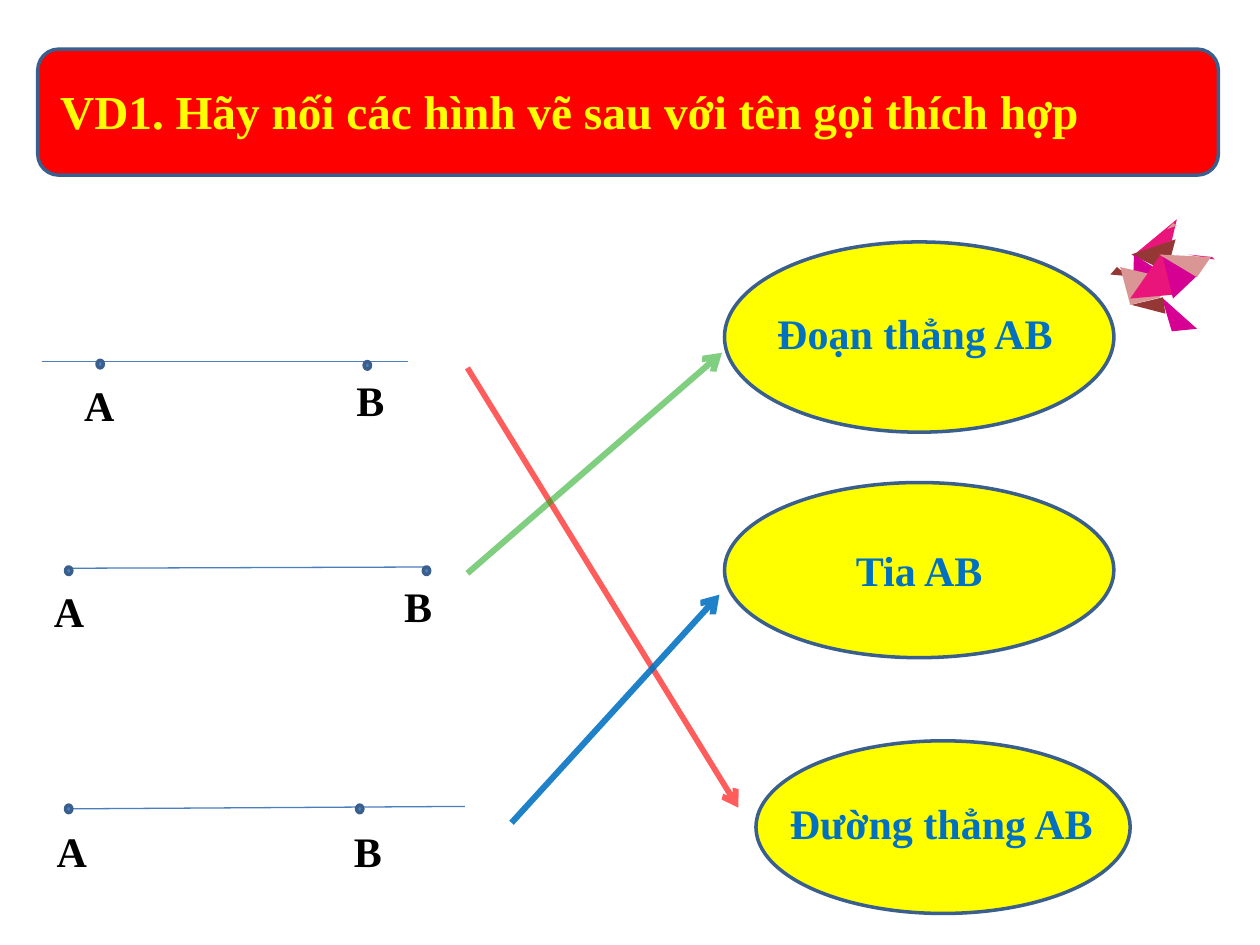
from dataclasses import dataclass
from typing import Optional

from lxml.etree import SubElement
from pptx import Presentation
from pptx.dml.color import RGBColor
from pptx.enum.shapes import MSO_CONNECTOR, MSO_SHAPE
from pptx.enum.text import MSO_ANCHOR, MSO_AUTO_SIZE, PP_ALIGN
from pptx.oxml.ns import qn
from pptx.util import Inches, Length, Pt

# The slide is a grid of 100 columns by 75 rows
COLUMNS, ROWS = 100, 75
CELL = Inches(0.1)
FONT = "Times New Roman"
OUTLINE, POINT_FILL, FIGURE_LINE = "3A5F8C", "4F81BD", "4B7EBC"
RED, YELLOW, BLUE, BLACK = "FF0000", "FFFF00", "0070C0", "000000"
PINK, ROSE, BROWN, MAGENTA = "EA157A", "D99694", "953735", "D60093"

Position = tuple[float, float]
Box = tuple[float, float, float, float]


@dataclass
class Figure:
    line: tuple[Position, Position]
    points: tuple[Position, Position]
    labels: tuple[Box, Box]


@dataclass
class Name:
    text: str
    oval: Box
    label: Optional[Box] = None


@dataclass
class Arrow:
    start: Position
    end: Position
    color: str
    width: float
    opacity: int


@dataclass
class Facet:
    color: str
    corners: list[Position]


FIGURES = [
    Figure(((3.3, 28.7), (32.4, 28.7)), ((7.7, 28.6), (28.9, 28.7)),
           ((5.7, 29.6, 4.5, 5), (27.3, 29.2, 4.3, 5))),
    Figure(((5.4, 45.1), (33.8, 45)), ((5.2, 45), (33.6, 45)),
           ((3.3, 46, 4.5, 5), (31.1, 45.6, 3.9, 5))),
    Figure(((5.2, 64.2), (36.9, 64)), ((5.2, 63.9), (28.3, 63.9)),
           ((3.5, 65, 4.5, 5), (27.1, 65, 4.3, 5))),
]
NAMES = [
    Name("Đoạn thẳng AB", (57.5, 19.2, 30.9, 15.1), (60.7, 23.9, 25.6, 6.1)),
    Name("Tia AB", (57.5, 38.3, 30.9, 13.9)),
    Name("Đường thẳng AB", (60, 58.8, 29.7, 13.7), (61.7, 62.8, 26.3, 5)),
]
ARROWS = [
    Arrow((37.1, 29.2), (58.6, 64.1), RED, 3.25, 63),
    Arrow((37.1, 45.5), (57.3, 28), "18A81B", 3.5, 55),
    Arrow((40.6, 65.3), (57.1, 47.2), BLUE, 3.5, 88),
]
BIRD_BACK = [
    Facet(PINK, [(94.3, 20.2), (96.2, 20.4), (96.4, 20.6)]),
    Facet(PINK, [(89.9, 20.3), (93.4, 17.4), (93, 19.1)]),
    Facet(ROSE, [(92.6, 18.2), (93.1, 17.7), (93.4, 17.9)]),
    Facet(BROWN, [(89.8, 20.2), (93.3, 19), (92.6, 21.6)]),
    Facet(MAGENTA, [(89.9, 23.1), (90, 20.2), (92, 21.5)]),
]
BEAK: Box = (88.4, 21.3, 0.8, 1.1)
BIRD_FRONT = [
    Facet(MAGENTA, [(93, 26.3), (92.2, 23.6), (95, 26.1)]),
    Facet(ROSE, [(88.9, 21.2), (91.9, 21.9), (92.1, 23.6), (89.7, 24.2)]),
    Facet(BROWN, [(92.3, 23.6), (92.5, 24.9), (89.8, 24.2)]),
    Facet(PINK, [(89.7, 23.7), (92.2, 20.1), (93.1, 23.4)]),
    Facet(MAGENTA, [(95, 21.9), (93.1, 23.7), (92.3, 20.4)]),
    Facet(ROSE, [(96.1, 20.4), (95, 22), (92, 20.2)]),
]


def cells(*values: float) -> list[Length]:
    return [Length(round(value * CELL)) for value in values]


def color_of(hex_text: str) -> RGBColor:
    return RGBColor.from_string(hex_text)


def paint(shape, fill: str, outline: Optional[str] = None) -> None:
    shape.shadow.inherit = False
    shape.fill.solid()
    shape.fill.fore_color.rgb = color_of(fill)
    if outline:
        shape.line.color.rgb = color_of(outline)
        shape.line.width = Pt(2)
    else:
        shape.line.fill.background()


def add_preset(slide, preset, box: Box, fill: str, outline: Optional[str] = None):
    shape = slide.shapes.add_shape(preset, *cells(*box))
    paint(shape, fill, outline)
    return shape


def write(paragraph, text: str, size: float, color: str) -> None:
    run = paragraph.add_run()
    run.text = text
    run.font.name = FONT
    run.font.size = Pt(size)
    run.font.bold = True
    run.font.color.rgb = color_of(color)


def add_label(slide, text: str, box: Box, size: float, color: str) -> None:
    frame = slide.shapes.add_textbox(*cells(*box)).text_frame
    frame.word_wrap = False
    frame.auto_size = MSO_AUTO_SIZE.SHAPE_TO_FIT_TEXT
    write(frame.paragraphs[0], text, size, color)


def add_line(slide, start: Position, end: Position, color: str, width: float):
    line = slide.shapes.add_connector(MSO_CONNECTOR.STRAIGHT, *cells(*start, *end))
    line.line.color.rgb = color_of(color)
    line.line.width = Pt(width)
    SubElement(line._element.spPr, qn("a:effectLst"))
    return line


def add_figure(slide, figure: Figure) -> None:
    add_line(slide, *figure.line, FIGURE_LINE, 0.75)
    for letter, point, label in zip("AB", figure.points, figure.labels):
        add_preset(slide, MSO_SHAPE.FLOWCHART_CONNECTOR, (*point, 0.5, 0.6),
                   POINT_FILL, OUTLINE)
        add_label(slide, letter, label, 24, BLACK)


def add_name(slide, name: Name) -> None:
    oval = add_preset(slide, MSO_SHAPE.OVAL, name.oval, YELLOW, OUTLINE)
    if name.label:
        add_label(slide, name.text, name.label, 24, BLUE)
        return
    oval.text_frame.vertical_anchor = MSO_ANCHOR.MIDDLE
    paragraph = oval.text_frame.paragraphs[0]
    paragraph.alignment = PP_ALIGN.CENTER
    write(paragraph, name.text, 24, BLUE)


def add_arrow(slide, arrow: Arrow) -> None:
    line = add_line(slide, arrow.start, arrow.end, arrow.color, arrow.width)
    outline = line.line._get_or_add_ln()
    color = outline.find(".//" + qn("a:srgbClr"))
    SubElement(color, qn("a:alpha"), val=str(arrow.opacity * 1000))
    SubElement(outline, qn("a:tailEnd"), type="arrow")


def add_facet(slide, facet: Facet) -> None:
    first, *others = [cells(*corner) for corner in facet.corners]
    builder = slide.shapes.build_freeform(*first)
    builder.add_line_segments(others, close=True)
    paint(builder.convert_to_shape(), facet.color)


def main() -> None:
    presentation = Presentation()
    presentation.slide_width, presentation.slide_height = cells(COLUMNS, ROWS)
    slide = presentation.slides.add_slide(presentation.slide_layouts[6])

    # Title banner
    add_preset(slide, MSO_SHAPE.ROUNDED_RECTANGLE, (3, 3.9, 93.7, 10), RED, OUTLINE)
    add_label(slide, "VD1. Hãy nối các hình vẽ sau với tên gọi thích hợp",
              (3.8, 6, 84.6, 5.6), 27, YELLOW)

    # Figures, their names and the matching arrows
    for figure in FIGURES:
        add_figure(slide, figure)
    for name in NAMES:
        add_name(slide, name)
    for arrow in ARROWS:
        add_arrow(slide, arrow)

    # Folded paper bird
    for facet in BIRD_BACK:
        add_facet(slide, facet)
    add_preset(slide, MSO_SHAPE.RIGHT_TRIANGLE, BEAK, BROWN).rotation = 131.2
    for facet in BIRD_FRONT:
        add_facet(slide, facet)

    presentation.save("out.pptx")


if __name__ == "__main__":
    main()
